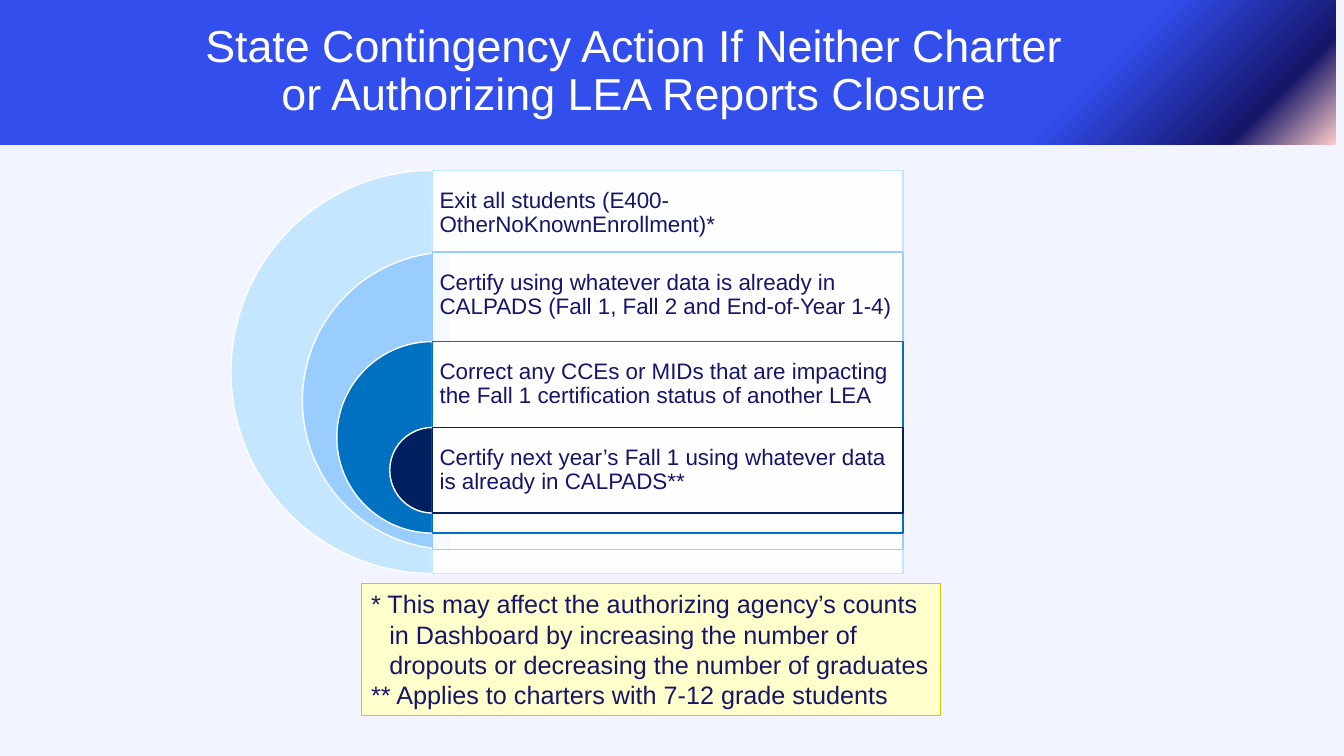
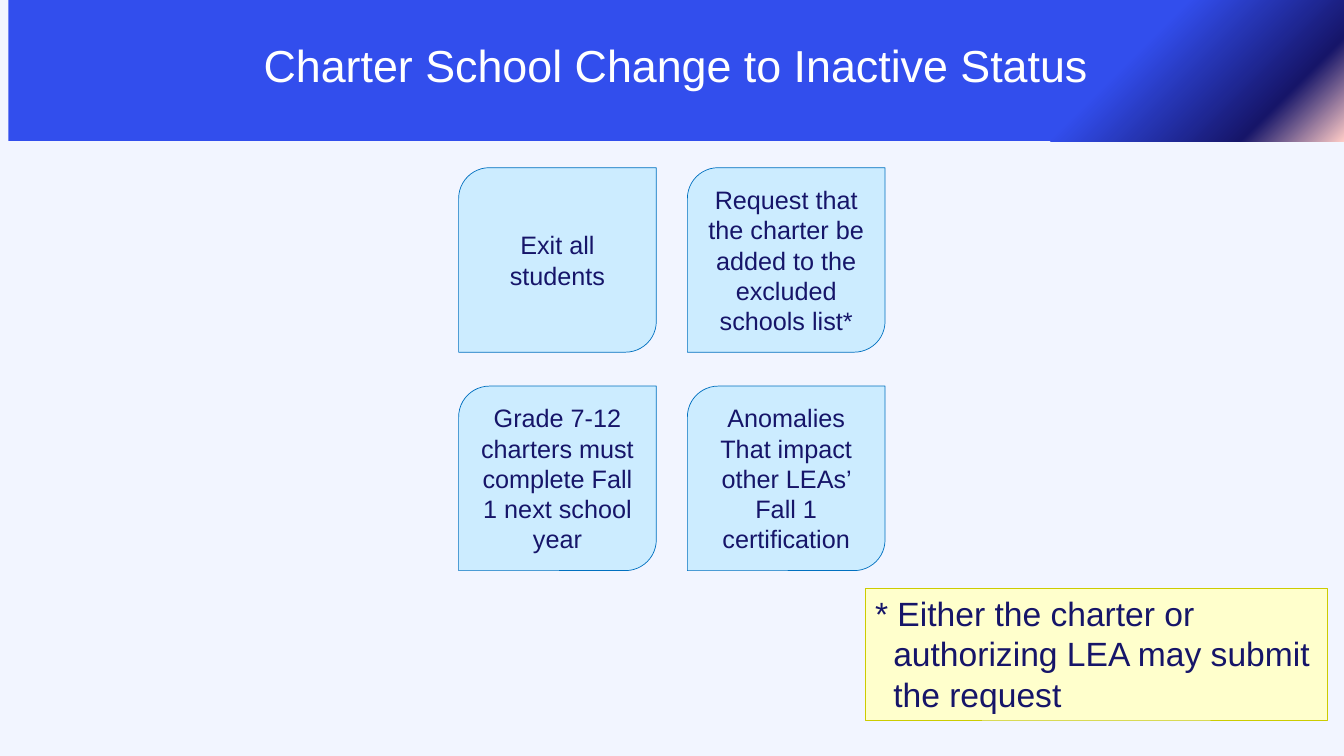
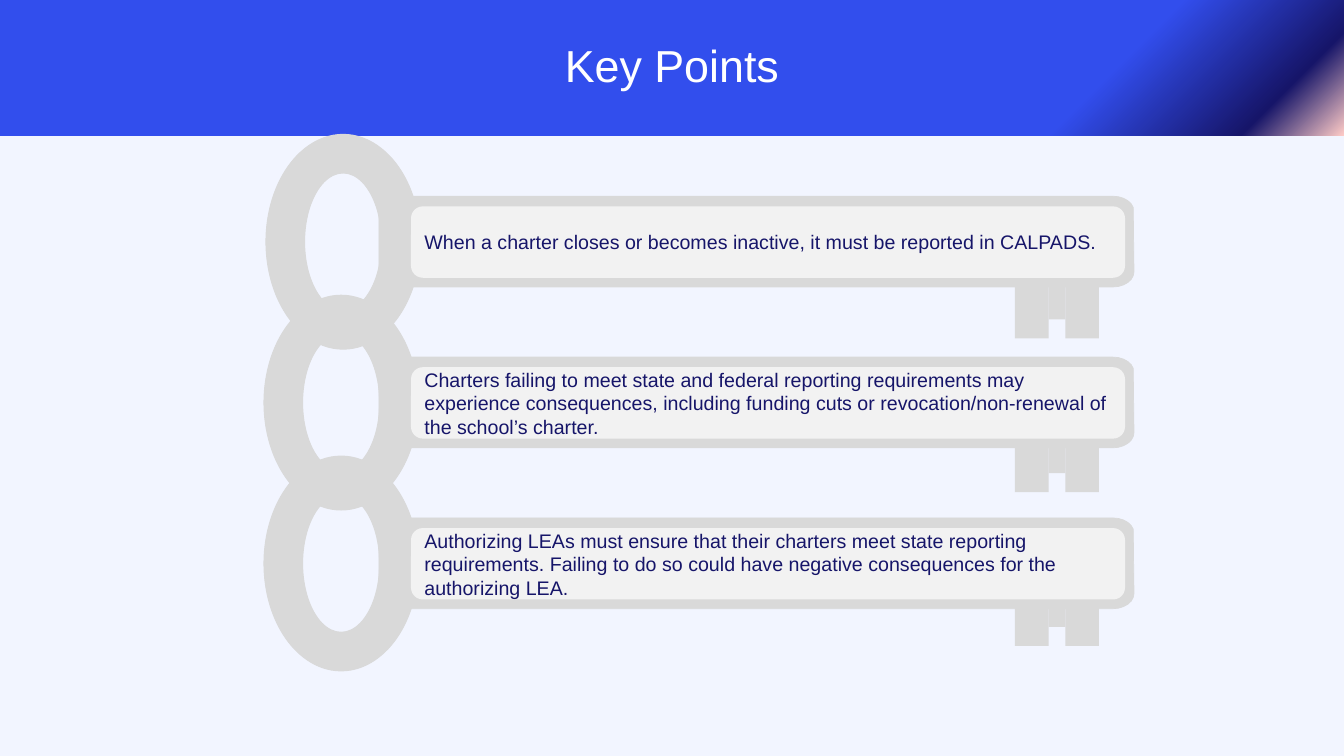
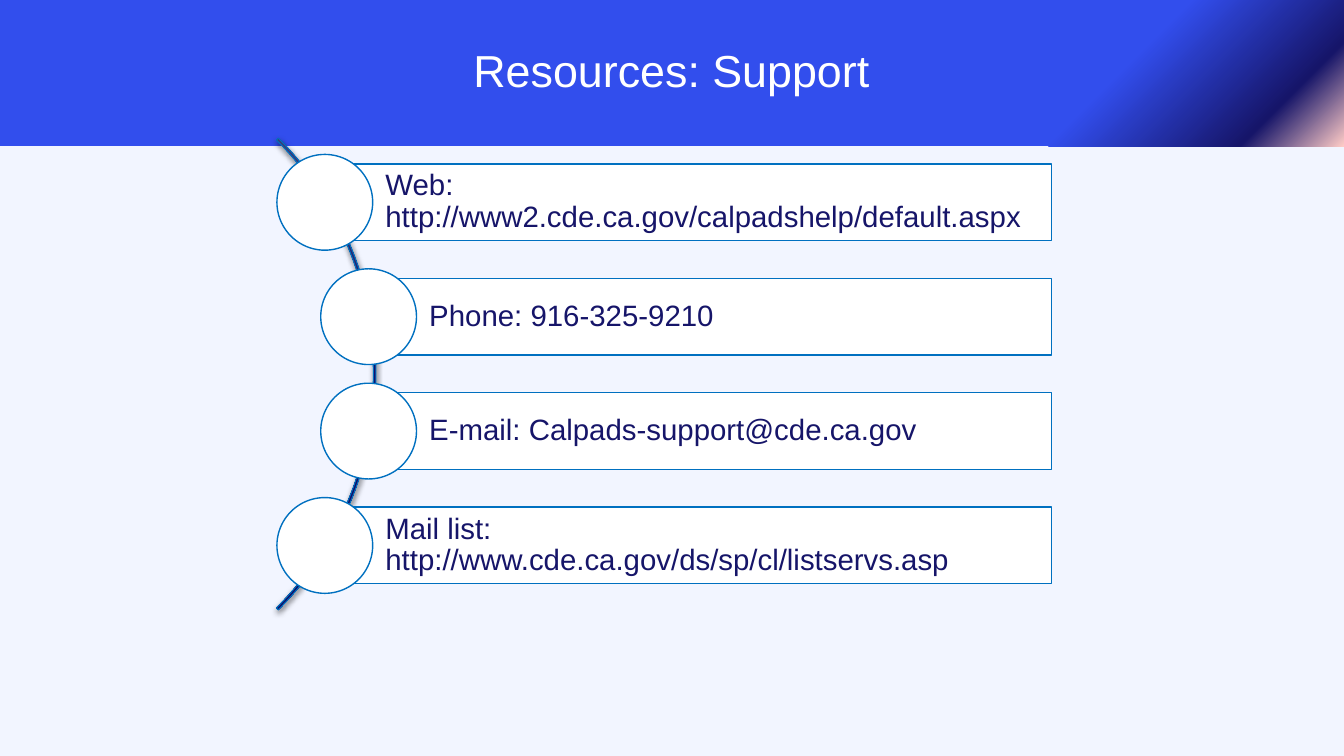
"""Build four slides on charter school closure reporting."""
import math
from lxml import etree
from pptx import Presentation
from pptx.dml.color import RGBColor
from pptx.enum import shapes, text
from pptx.oxml import ns
from pptx.util import Pt

WHITE = RGBColor(0xFF, 0xFF, 0xFF)
PAGE = RGBColor(0xF2, 0xF5, 0xFF)
NAVY = RGBColor(0x16, 0x15, 0x69)
ROYAL = RGBColor(0x32, 0x4E, 0xED)
PINK = RGBColor(0xFF, 0xCC, 0xC7)
BLUE = RGBColor(0x00, 0x70, 0xC0)
ICE = RGBColor(0xC5, 0xE6, 0xFF)
SKY = RGBColor(0x99, 0xCC, 0xFF)
MIDNIGHT = RGBColor(0x00, 0x20, 0x60)
CARD = RGBColor(0xCC, 0xEC, 0xFF)
NOTE = RGBColor(0xFF, 0xFF, 0xCC)
OLIVE = RGBColor(0xCC, 0xCC, 0x00)
KEY = RGBColor(0xD9, 0xD9, 0xD9)
PANEL = RGBColor(0xF2, 0xF2, 0xF2)
ARC_TOP = RGBColor(0x4D, 0x4D, 0x7C)
ARC_MIDDLE = RGBColor(0x12, 0x11, 0x6D)
ARC_BOTTOM = RGBColor(0x0C, 0x0B, 0x65)
BAND_STOPS = [(80, ROYAL), (93, NAVY), (100, PINK)]
ARC_STOPS = [(0, ARC_TOP), (50, ARC_MIDDLE), (100, ARC_BOTTOM)]

SHAPE = shapes.MSO_SHAPE
LEFT, CENTER = text.PP_ALIGN.LEFT, text.PP_ALIGN.CENTER
TOP, MIDDLE = text.MSO_ANCHOR.TOP, text.MSO_ANCHOR.MIDDLE


def draw(slide, kind, place, fill, line=None, width=1.0, angle=0):
    """Add a preset shape; a list as fill holds gradient stops."""
    shape = slide.shapes.add_shape(kind, *[Pt(v) for v in place])
    shape.shadow.inherit = False
    if isinstance(fill, list):
        shape.fill.gradient()
        shape.fill.gradient_angle = 360 - angle
        stops = shape._element.spPr.find(ns.qn("a:gradFill")).find(ns.qn("a:gsLst"))
        for old in list(stops):
            stops.remove(old)
        for position, color in fill:
            stop = etree.SubElement(stops, ns.qn("a:gs"), pos=str(position * 1000))
            etree.SubElement(stop, ns.qn("a:srgbClr"), val=str(color))
    else:
        shape.fill.solid()
        shape.fill.fore_color.rgb = fill
    if line is None:
        shape.line.fill.background()
    else:
        shape.line.color.rgb = line
        shape.line.width = Pt(width)
    return shape


def write(shape, words, size, color=NAVY, align=LEFT, anchor=MIDDLE,
          spacing=1.0, insets=(7.2, 3.6, 7.2, 3.6), hanging=0):
    """Set and format the text of a shape."""
    frame = shape.text_frame
    frame.word_wrap = True
    frame.vertical_anchor = anchor
    frame.margin_left, frame.margin_top, frame.margin_right, frame.margin_bottom = map(Pt, insets)
    frame.text = words
    for paragraph in frame.paragraphs:
        paragraph.alignment = align
        paragraph.line_spacing = spacing
        if hanging:
            properties = paragraph._p.get_or_add_pPr()
            properties.set("marL", str(Pt(hanging)))
            properties.set("indent", str(-Pt(hanging)))
        for run in paragraph.runs:
            run.font.name = "Arial"
            run.font.size = Pt(size)
            run.font.color.rgb = color


deck = Presentation()
deck.slide_width, deck.slide_height = Pt(960), Pt(540)

titles = [
    ("State Contingency Action If Neither Charter\vor Authorizing LEA Reports Closure",
     (-48, -1, 1002, 104.5)),
    ("Charter School Change to Inactive Status", (6, -3.5, 954, 104.5)),
    ("Key Points", (0, 0, 960, 97)),
    ("Resources: Support", (-0.5, 0, 960.5, 104.5)),
]
slides = []
for title, place in titles:
    slide = deck.slides.add_slide(deck.slide_layouts[6])
    slide.background.fill.solid()
    slide.background.fill.fore_color.rgb = PAGE
    band = draw(slide, SHAPE.RECTANGLE, place, BAND_STOPS, angle=45)
    write(band, title, 32, WHITE, CENTER, spacing=0.9)
    slides.append(slide)
contingency, inactive, key_points, support = slides

notes = [
    (contingency, (258, 417, 414, 94.3), 18,
     "* This may affect the authorizing agency’s counts in Dashboard by increasing "
     "the number of dropouts or decreasing the number of graduates\n"
     "** Applies to charters with 7-12 grade students"),
    (inactive, (618, 420, 330, 94.3), 24,
     "* Either the charter or authorizing LEA may submit the request"),
]
for slide, place, size, words in notes:
    note = draw(slide, SHAPE.RECTANGLE, place, NOTE, OLIVE, 0.5)
    write(note, words, size, anchor=TOP, hanging=13)

actions = [
    (165, 121.7, 288, ICE, "Exit all students (E400-OtherNoKnownEnrollment)*"),
    (216, 180, 212.4, SKY, "Certify using whatever data is already in CALPADS "
                           "(Fall 1, Fall 2 and End-of-Year 1-4)"),
    (240.6, 244, 136.8, BLUE, "Correct any CCEs or MIDs that are impacting the Fall 1 "
                              "certification status of another LEA"),
    (278.4, 305.3, 61.2, MIDNIGHT,
     "Certify next year’s Fall 1 using whatever data is already in CALPADS**"),
]
bar_left, bar_width, action_height = 309, 336, 61.2
for left, top, diameter, color, words in actions:
    half_disc = draw(contingency, SHAPE.PIE, (left, top, diameter, diameter), color, WHITE)
    half_disc.adjustments[0], half_disc.adjustments[1] = 54, 162
    bar = draw(contingency, SHAPE.RECTANGLE, (bar_left, top, bar_width, diameter), WHITE, color)
    tint = bar._element.spPr.find(ns.qn("a:solidFill"))[0]
    etree.SubElement(tint, ns.qn("a:alpha"), val="90000")
    action = contingency.shapes.add_textbox(Pt(bar_left), Pt(top), Pt(bar_width), Pt(action_height))
    write(action, words, 16, spacing=0.9, insets=(5, 5, 5, 5))

steps = [
    "Exit all students",
    "Request that the charter be added to the excluded schools list*",
    "Grade 7-12 charters must complete Fall 1 next school year",
    "Anomalies\nThat impact other LEAs’ Fall 1 certification",
]
for index, words in enumerate(steps):
    row, column = divmod(index, 2)
    place = (327.6 + 163.4 * column, 119.8 + 156 * row, 141.2, 131.8)
    step = draw(inactive, SHAPE.ROUND_2_DIAG_RECTANGLE, place, CARD, BLUE, 0.5)
    write(step, words, 18, align=CENTER)

points = [
    "When a charter closes or becomes inactive, it must be reported in CALPADS.",
    "Charters failing to meet state and federal reporting requirements may experience "
    "consequences, including funding cuts or revocation/non-renewal of the school’s charter.",
    "Authorizing LEAs must ensure that their charters meet state reporting requirements. "
    "Failing to do so could have negative consequences for the authorizing LEA.",
]
shaft_left, shaft_right, shaft_height = 270.7, 810, 64.8
corner_width, corner_height = 15, 10.8
for index, words in enumerate(points):
    top = 140.2 + 114.9 * index
    bottom = top + shaft_height
    teeth_top = 200.8 + 109.8 * index
    for left, width, height in [(725, 24, 41), (761, 24, 41), (749, 12, 27.4)]:
        draw(key_points, SHAPE.RECTANGLE, (left, teeth_top, width, height), KEY)
    ring_left = 190 if index == 0 else 188.6
    draw(key_points, SHAPE.DONUT, (ring_left, top - 44.2, 110.2, 153.4), KEY, KEY, 0.75)
    outline = []
    for degrees in range(-90, 91, 15):
        turn = math.radians(degrees)
        center = top + corner_height if degrees < 0 else bottom - corner_height
        x = shaft_right - corner_width + corner_width * math.cos(turn)
        outline.append((Pt(x), Pt(center + corner_height * math.sin(turn))))
    outline.append((Pt(shaft_left), Pt(bottom)))
    builder = key_points.shapes.build_freeform(Pt(shaft_left), Pt(top))
    builder.add_line_segments(outline, close=True)
    shaft = builder.convert_to_shape()
    shaft.shadow.inherit = False
    shaft.fill.solid()
    shaft.fill.fore_color.rgb = KEY
    shaft.line.color.rgb = KEY
    shaft.line.width = Pt(0.5)
    panel = draw(key_points, SHAPE.ROUNDED_RECTANGLE, (293.6, top + 7.2, 510, 51), PANEL)
    write(panel, words, 14)

arc = draw(support, SHAPE.BLOCK_ARC, (-208, 28.8, 476.6, 476.6), ARC_STOPS, BLUE, 0.75, 90)
arc.adjustments[0], arc.adjustments[1], arc.adjustments[2] = 189, 27, 0.004
effects = arc._element.spPr.find(ns.qn("a:effectLst"))
shade = etree.SubElement(effects, ns.qn("a:outerShdw"), blurRad=str(Pt(4.5)), dist=str(Pt(1.5)),
                         dir="5400000", rotWithShape="0")
shade_color = etree.SubElement(shade, ns.qn("a:srgbClr"), val="000000")
etree.SubElement(shade_color, ns.qn("a:alpha"), val="63000")

contacts = [
    (232, "Web: http://www2.cde.ca.gov/calpadshelp/default.aspx"),
    (263.3, "Phone: 916-325-9210"),
    (263.3, "E-mail: Calpads-support@cde.ca.gov"),
    (232, "Mail list: http://www.cde.ca.gov/ds/sp/cl/listservs.asp"),
]
contacts_right, dot = 751.3, 68.4
for index, (left, words) in enumerate(contacts):
    top = 117.2 + 81.7 * index
    contact = draw(support, SHAPE.RECTANGLE, (left, top, contacts_right - left, 54.6), WHITE, BLUE)
    write(contact, words, 21, spacing=0.9, insets=(43.3, 4.2, 4.2, 4.2))
    draw(support, SHAPE.OVAL, (left - dot / 2, top - 6.9, dot, dot), WHITE, BLUE)

deck.save("out.pptx")
